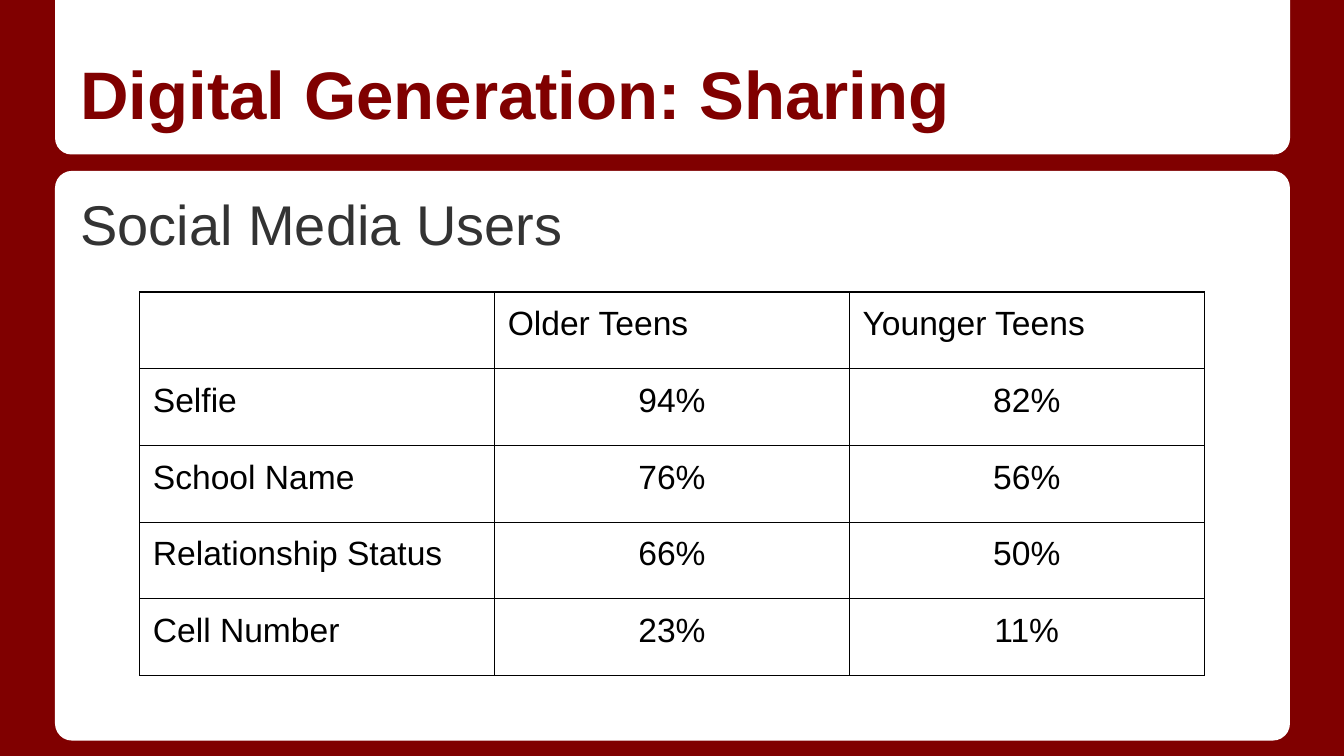
from dataclasses import dataclass

from lxml.etree import SubElement
from pptx import Presentation
from pptx.dml.color import RGBColor as RGB
from pptx.enum.shapes import MSO_SHAPE as Kind
from pptx.enum.text import MSO_ANCHOR as Anchor, MSO_AUTO_SIZE as Fit, PP_ALIGN as Align
from pptx.oxml.ns import qn
from pptx.util import Cm, Pt


@dataclass(frozen=True)
class Theme:
    face: str = "Arial"
    red: RGB = RGB(0x80, 0, 0)
    white: RGB = RGB(0xFF, 0xFF, 0xFF)
    gray: RGB = RGB(0x33, 0x33, 0x33)
    black: RGB = RGB(0, 0, 0)
    head: Pt = Pt(36)
    lead: Pt = Pt(30)
    cell: Pt = Pt(18)
    rule: Pt = Pt(0.75)


LOOK = Theme()
PAD = Cm(0.25)
INSETS = {f"margin_{side}": PAD for side in ("left", "top", "right", "bottom")}
ROWS = [
    ("", "Older Teens", "Younger Teens"),
    ("Selfie", "94%", "82%"),
    ("School Name", "76%", "56%"),
    ("Relationship Status", "66%", "50%"),
    ("Cell Number", "23%", "11%"),
]


def apply(item, values):
    for name, value in values.items():
        setattr(item, name, value)


def style(para, size, color, bold=False, align=Align.LEFT):
    para.alignment = align
    apply(para.font, {"name": LOOK.face, "size": size, "bold": bold})
    para.font.color.rgb = color


def panel(slide, box, kind, curves, turn=0):
    """White card behind the text."""
    card = slide.shapes.add_shape(kind, *box)
    card.rotation = turn
    for i, curve in enumerate(curves):
        card.adjustments[i] = curve
    card.fill.solid()
    card.fill.fore_color.rgb = LOOK.white
    card.line.fill.background()
    card.shadow.inherit = False
    # Keep cards behind the placeholders
    slide.shapes._spTree.insert(2, card._element)


def fill_text(holder, box, text, anchor, **font):
    """Place a placeholder in its box and set its one paragraph."""
    apply(holder, dict(zip(("left", "top", "width", "height"), box)))
    frame = holder.text_frame
    frame.text = text
    apply(frame, {**INSETS, "word_wrap": True, "auto_size": Fit.NONE,
                  "vertical_anchor": anchor})
    para = frame.paragraphs[0]
    style(para, **font)
    return para


def header(slide, box):
    left, top, width, height = box
    panel(slide, box, Kind.ROUND_2_SAME_RECTANGLE, (0.106, 0), 180)
    area = (left + Cm(0.23), top + Cm(0.38), width - Cm(0.48), height - Cm(0.53))
    fill_text(slide.shapes.title, area, "Digital Generation: Sharing", Anchor.BOTTOM,
              size=LOOK.head, color=LOOK.red, bold=True)


def border(cell):
    props = cell._tc.get_or_add_tcPr()
    for i, side in enumerate(("lnL", "lnR", "lnT", "lnB")):
        line = props.makeelement(qn(f"a:{side}"), {"w": str(LOOK.rule)})
        paint = SubElement(line, qn("a:solidFill"))
        SubElement(paint, qn("a:srgbClr"), val=str(LOOK.black))
        props.insert(i, line)


def grid(slide, box):
    """Table of shares by age group, with equal rows and columns."""
    table = slide.shapes.add_table(len(ROWS), len(ROWS[0]), *box).table
    apply(table, {"first_row": False, "horz_banding": False})
    for r, row in enumerate(ROWS):
        for c, text in enumerate(row):
            cell = table.cell(r, c)
            cell.text = text
            apply(cell, INSETS)
            cell.fill.background()
            align = Align.CENTER if r and c else Align.LEFT
            style(cell.text_frame.paragraphs[0], LOOK.cell, LOOK.black, align=align)
            border(cell)


def content(slide, box):
    left, top, width, height = box
    panel(slide, box, Kind.ROUNDED_RECTANGLE, (0.03,))
    area = (left + Cm(0.23), top + Cm(0.1), width - Cm(0.48), height - Cm(0.43))
    para = fill_text(slide.placeholders[1], area, "Social Media Users", Anchor.TOP,
                     size=LOOK.lead, color=LOOK.gray)
    para.space_before = Pt(3)
    # Plain line: no bullet or hanging indent
    props = para._p.get_or_add_pPr()
    apply_indent = {"marL": "0", "indent": "0"}
    for name, value in apply_indent.items():
        props.set(name, value)
    SubElement(props, qn("a:buNone"))
    # SubElement appends after defRPr, so put the bullet setting before it
    font = props.find(qn("a:defRPr"))
    if font is not None:
        props.append(font)
    grid(slide, (left + Cm(1.6), top + Cm(2.29), Cm(20.12), Cm(7.25)))


def main():
    deck = Presentation()
    apply(deck, {"slide_width": Cm(25.4), "slide_height": Cm(14.29)})
    slide = deck.slides.add_slide(deck.slide_layouts[1])
    back = slide.background.fill
    back.solid()
    back.fore_color.rgb = LOOK.red
    left, width = Cm(1.04), Cm(23.34)
    header(slide, (left, 0, width, Cm(2.92)))
    content(slide, (left, Cm(3.23), width, Cm(10.77)))
    deck.save("out.pptx")


if __name__ == "__main__":
    main()
